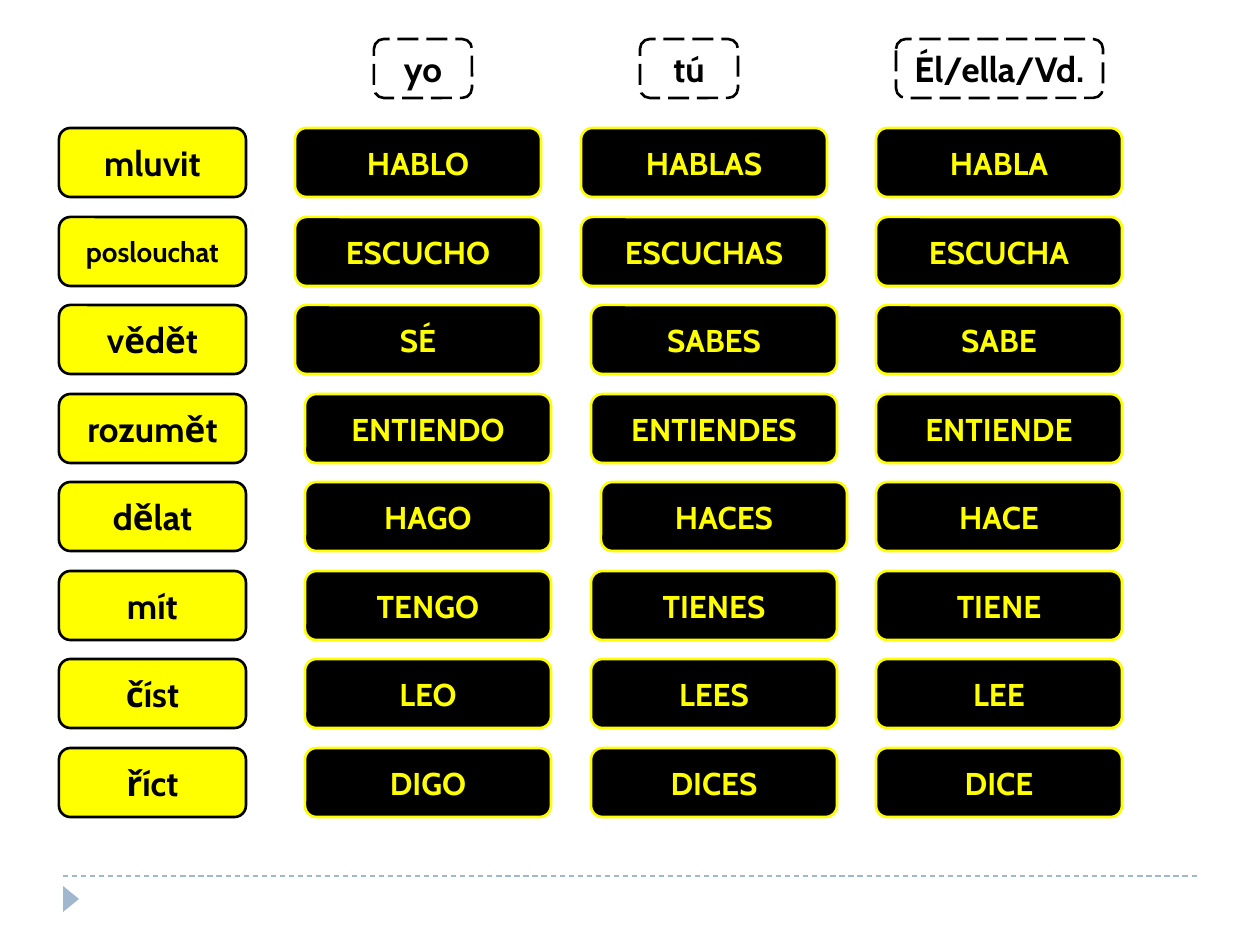
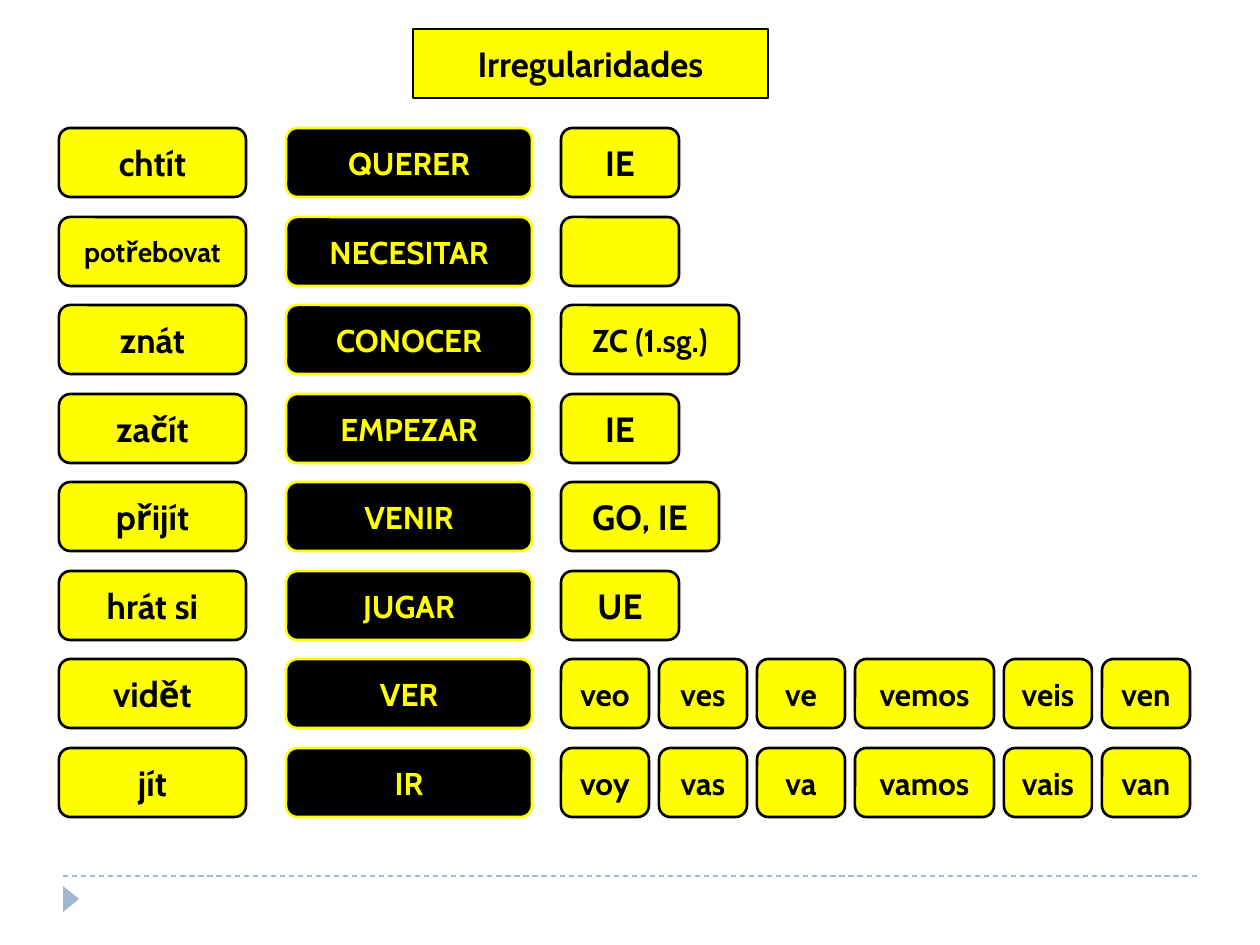
import pptx
import pptx.util
import pptx.dml.color
import pptx.enum.dml
import pptx.enum.shapes
import pptx.enum.text
from dataclasses import dataclass
from lxml import etree

PRONOUNS = [("yo", 374, 98), ("tú", 640, 98), ("Él/ella/Vd.", 896, 207)]

CONJUGATIONS = [
    ("mluvit", 20, [("HABLO", 295), ("HABLAS", 581), ("HABLA", 876)]),
    ("poslouchat", 16, [("ESCUCHO", 295), ("ESCUCHAS", 581), ("ESCUCHA", 876)]),
    ("vědět", 20, [("SÉ", 295), ("SABES", 591), ("SABE", 876)]),
    ("rozumět", 20, [("ENTIENDO", 305), ("ENTIENDES", 591), ("ENTIENDE", 876)]),
    ("dělat", 20, [("HAGO", 305), ("HACES", 601), ("HACE", 876)]),
    ("mít", 20, [("TENGO", 305), ("TIENES", 591), ("TIENE", 876)]),
    ("číst", 20, [("LEO", 305), ("LEES", 591), ("LEE", 876)]),
    ("říct", 20, [("DIGO", 305), ("DICES", 591), ("DICE", 876)]),
]

IRREGULAR_TITLE = "Irregularidades"
FORM_WIDTHS = [88, 88, 88, 139, 88, 88]
IRREGULAR_VERBS = [
    ("chtít", 20, "QUERER", ["IE"], [118], 20),
    ("potřebovat", 16, "NECESITAR", [""], [118], 20),
    ("znát", 20, "CONOCER", ["ZC (1.sg.)"], [178], 18),
    ("začít", 20, "EMPEZAR", ["IE"], [118], 20),
    ("přijít", 20, "VENIR", ["GO, IE"], [158], 20),
    ("hrát si", 20, "JUGAR", ["UE"], [118], 20),
    ("vidět", 20, "VER", ["veo", "ves", "ve", "vemos", "veis", "ven"], FORM_WIDTHS, 18),
    ("jít", 20, "IR", ["voy", "vas", "va", "vamos", "vais", "van"], FORM_WIDTHS, 18),
]


@dataclass(frozen=True)
class Theme:
    font: str = "Cabin"
    black: str = "000000"
    yellow: str = "FFFF00"
    white: str = "FFFFFF"
    footer: str = "9FB8CD"
    label_size: int = 20
    verb_size: int = 18
    outline: float = 1.5
    footer_line: float = 0.75


THEME = Theme()
SLIDE_WIDTH, SLIDE_HEIGHT = 1260, 945
FIRST_ROW, LAST_ROW, TILE_HEIGHT = 128, 748, 69
MEANING_LEFT, MEANING_WIDTH = 59, 187
INFINITIVE_LEFT, VERB_WIDTH = 286, 246
FORMS_LEFT, FORM_GAP = 561, 10
DRAWING = "http://schemas.openxmlformats.org/drawingml/2006/main"


def px(length):
    return pptx.util.Emu(round(length * 914400 / 126))


def color(value):
    return pptx.dml.color.RGBColor.from_string(value)


def row_top(index, count):
    return FIRST_ROW + round(index * (LAST_ROW - FIRST_ROW) / (count - 1))


def format_tile(shape, text, size, fill, ink, outline):
    shape.shadow.inherit = False
    shape.fill.solid()
    shape.fill.fore_color.rgb = color(fill)
    shape.line.color.rgb = color(outline)
    shape.line.width = pptx.util.Pt(THEME.outline)
    frame = shape.text_frame
    frame.word_wrap = True
    frame.auto_size = pptx.enum.text.MSO_AUTO_SIZE.NONE
    frame.vertical_anchor = pptx.enum.text.MSO_ANCHOR.MIDDLE
    if text:
        paragraph = frame.paragraphs[0]
        paragraph.alignment = pptx.enum.text.PP_ALIGN.CENTER
        run = paragraph.add_run()
        run.text = text
        run.font.name = THEME.font
        run.font.size = pptx.util.Pt(size)
        run.font.bold = True
        run.font.color.rgb = color(ink)


def add_rounded(slide, left, top, width, height):
    return slide.shapes.add_shape(
        pptx.enum.shapes.MSO_SHAPE.ROUNDED_RECTANGLE,
        px(left), px(top), px(width), px(height))


def add_yellow_tile(slide, text, size, left, top, width):
    shape = add_rounded(slide, left, top, width, TILE_HEIGHT)
    format_tile(shape, text, size, THEME.yellow, THEME.black, THEME.black)


def add_verb_tile(slide, text, left, top):
    shape = add_rounded(slide, left, top, VERB_WIDTH, TILE_HEIGHT)
    format_tile(shape, text, THEME.verb_size, THEME.black, THEME.yellow, THEME.yellow)


def add_pronoun(slide, text, left, width):
    shape = add_rounded(slide, left, 39, width, 59)
    format_tile(shape, text, THEME.label_size, THEME.white, THEME.black, THEME.black)
    shape.line.dash_style = pptx.enum.dml.MSO_LINE.LONG_DASH


def add_title(slide, text):
    title = slide.shapes.title
    title.left, title.top, title.width, title.height = map(px, (413, 29, 355, TILE_HEIGHT))
    geometry = etree.SubElement(title.element.spPr, f"{{{DRAWING}}}prstGeom", prst="roundRect")
    etree.SubElement(geometry, f"{{{DRAWING}}}avLst")
    format_tile(title, text, THEME.label_size, THEME.yellow, THEME.black, THEME.black)


def add_footer(slide):
    rule = slide.shapes.add_connector(
        pptx.enum.shapes.MSO_CONNECTOR.STRAIGHT, px(63), px(876), px(1197), px(876))
    rule.line.color.rgb = color(THEME.footer)
    rule.line.width = pptx.util.Pt(THEME.footer_line)
    rule.line.dash_style = pptx.enum.dml.MSO_LINE.DASH
    etree.SubElement(rule.element.spPr, f"{{{DRAWING}}}effectLst")
    marker = slide.shapes.add_shape(
        pptx.enum.shapes.MSO_SHAPE.ISOSCELES_TRIANGLE, px(58), px(891), px(26), px(16))
    marker.rotation = 90
    marker.shadow.inherit = False
    marker.fill.solid()
    marker.fill.fore_color.rgb = color(THEME.footer)
    marker.line.fill.background()


def add_slide(presentation, layout_name):
    slide = presentation.slides.add_slide(
        presentation.slide_layouts.get_by_name(layout_name))
    add_footer(slide)
    return slide


def build_conjugations(presentation):
    slide = add_slide(presentation, "Blank")
    for pronoun, left, width in PRONOUNS:
        add_pronoun(slide, pronoun, left, width)
    for index, (meaning, size, forms) in enumerate(CONJUGATIONS):
        top = row_top(index, len(CONJUGATIONS))
        add_yellow_tile(slide, meaning, size, MEANING_LEFT, top, MEANING_WIDTH)
        for form, left in forms:
            add_verb_tile(slide, form, left, top)


def build_irregularities(presentation):
    slide = add_slide(presentation, "Title Only")
    add_title(slide, IRREGULAR_TITLE)
    for index, (meaning, size, infinitive, forms, widths, form_size) in enumerate(IRREGULAR_VERBS):
        top = row_top(index, len(IRREGULAR_VERBS))
        add_yellow_tile(slide, meaning, size, MEANING_LEFT, top, MEANING_WIDTH)
        add_verb_tile(slide, infinitive, INFINITIVE_LEFT, top)
        left = FORMS_LEFT
        for form, width in zip(forms, widths):
            add_yellow_tile(slide, form, form_size, left, top, width)
            left += width + FORM_GAP


def main():
    presentation = pptx.Presentation()
    presentation.slide_width = px(SLIDE_WIDTH)
    presentation.slide_height = px(SLIDE_HEIGHT)
    build_conjugations(presentation)
    build_irregularities(presentation)
    presentation.save("out.pptx")


if __name__ == "__main__":
    main()
